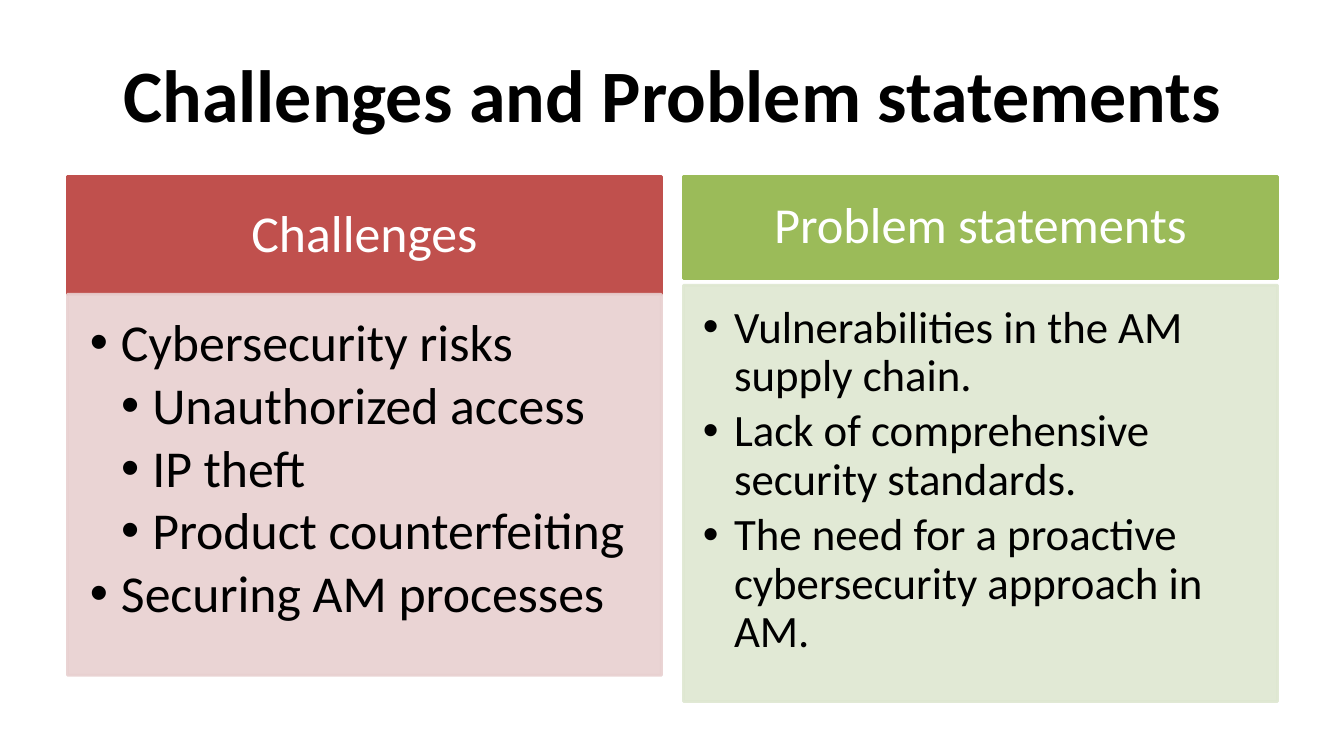
"""Build the slide on challenges and problem statements."""
from lxml.etree import SubElement
from pptx import Presentation
from pptx.dml.color import RGBColor
from pptx.enum.shapes import MSO_SHAPE
from pptx.enum.text import MSO_ANCHOR, PP_ALIGN
from pptx.oxml.ns import qn
from pptx.util import Inches, Pt

FONT = "Calibri"
BLACK = RGBColor(0x00, 0x00, 0x00)
WHITE = RGBColor(0xFF, 0xFF, 0xFF)
RED = RGBColor(0xC0, 0x50, 0x4D)
PALE_RED = RGBColor(0xE8, 0xD0, 0xD0)
GREEN = RGBColor(0x9B, 0xBB, 0x59)
PALE_GREEN = RGBColor(0xDE, 0xE7, 0xD1)

MARGIN = 0.67
COLUMN_TOP = 1.75
COLUMN_WIDTH = 5.89
COLUMN_STEP = 6.11
INDENT = 0.31

CHALLENGES = [
    (0, "Cybersecurity risks"),
    (1, "Unauthorized access"),
    (1, "IP theft"),
    (1, "Product counterfeiting"),
    (0, "Securing AM processes"),
]
PROBLEMS = [
    (0, "Vulnerabilities in the AM supply chain."),
    (0, "Lack of comprehensive security standards."),
    (0, "The need for a proactive cybersecurity approach in AM."),
]


def style_font(paragraph, size, color, bold=False):
    """Set the font of a whole paragraph."""
    font = paragraph.font
    font.name, font.size, font.bold = FONT, Pt(size), bold
    font.color.rgb = color


def set_insets(frame, left, top, right, bottom):
    """Set the inner margins of a text frame."""
    frame.margin_left, frame.margin_top = Inches(left), Inches(top)
    frame.margin_right, frame.margin_bottom = Inches(right), Inches(bottom)


def add_panel(slide, left, top, height, color, opacity=100):
    """Add a column-wide rectangle and return its text frame."""
    panel = slide.shapes.add_shape(
        MSO_SHAPE.RECTANGLE, Inches(left), Inches(top),
        Inches(COLUMN_WIDTH), Inches(height))
    panel.shadow.inherit = False
    panel.fill.solid()
    panel.fill.fore_color.rgb = color
    panel.line.color.rgb = color
    panel.line.width = Pt(2)
    if opacity < 100:
        for tone in panel.element.spPr.iter(qn("a:srgbClr")):
            SubElement(tone, qn("a:alpha"), val=str(opacity * 1000))
    panel.text_frame.word_wrap = True
    return panel.text_frame


def add_title(slide, wording):
    """Add the centred slide title."""
    title = slide.shapes.add_textbox(
        Inches(MARGIN), Inches(0.3), Inches(12), Inches(1.25)).text_frame
    title.word_wrap = True
    title.vertical_anchor = MSO_ANCHOR.MIDDLE
    heading = title.paragraphs[0]
    heading.text = wording
    heading.alignment = PP_ALIGN.CENTER
    style_font(heading, 52.8, BLACK, bold=True)


def add_header(slide, left, height, wording, size, color):
    """Add the coloured heading of a column."""
    header = add_panel(slide, left, COLUMN_TOP, height, color)
    header.vertical_anchor = MSO_ANCHOR.MIDDLE
    set_insets(header, 0.28, 0.16, 0.28, 0.16)
    heading = header.paragraphs[0]
    heading.text = wording
    heading.alignment = PP_ALIGN.CENTER
    heading.line_spacing = 0.9
    style_font(heading, size, WHITE)


def add_bullets(slide, left, top, height, points, size, color, insets):
    """Add the pale body of a column with its bulleted points."""
    body = add_panel(slide, left, top, height, color, opacity=90)
    body.vertical_anchor = MSO_ANCHOR.TOP
    set_insets(body, *insets)
    for index, (level, wording) in enumerate(points):
        point = body.add_paragraph() if index else body.paragraphs[0]
        point.text = wording
        point.level = level + 1
        point.alignment = PP_ALIGN.LEFT
        point.line_spacing = 0.9
        point.space_after = Pt(5)
        properties = point._p.get_or_add_pPr()
        properties.set("marL", str(Inches(INDENT * (level + 1))))
        properties.set("indent", str(Inches(-INDENT)))
        SubElement(properties, qn("a:buFont"), typeface="Arial")
        SubElement(properties, qn("a:buChar"), char="•")
        style_font(point, size, BLACK)


def main():
    """Build and save the slide."""
    deck = Presentation()
    deck.slide_width, deck.slide_height = Inches(13.33), Inches(7.5)
    slide = deck.slides.add_slide(deck.slide_layouts[6])
    add_title(slide, "Challenges and Problem statements")

    add_header(slide, MARGIN, 1.17, "Challenges", 37, RED)
    add_bullets(slide, MARGIN, 2.92, 3.78, CHALLENGES, 37, PALE_RED,
                (0.22, 0.22, 0.29, 0.32))

    problems_left = MARGIN + COLUMN_STEP
    add_header(slide, problems_left, 1.01, "Problem statements", 36, GREEN)
    add_bullets(slide, problems_left, 2.83, 4.13, PROBLEMS, 32, PALE_GREEN,
                (0.19, 0.19, 0.25, 0.28))

    deck.save("out.pptx")


if __name__ == "__main__":
    main()
